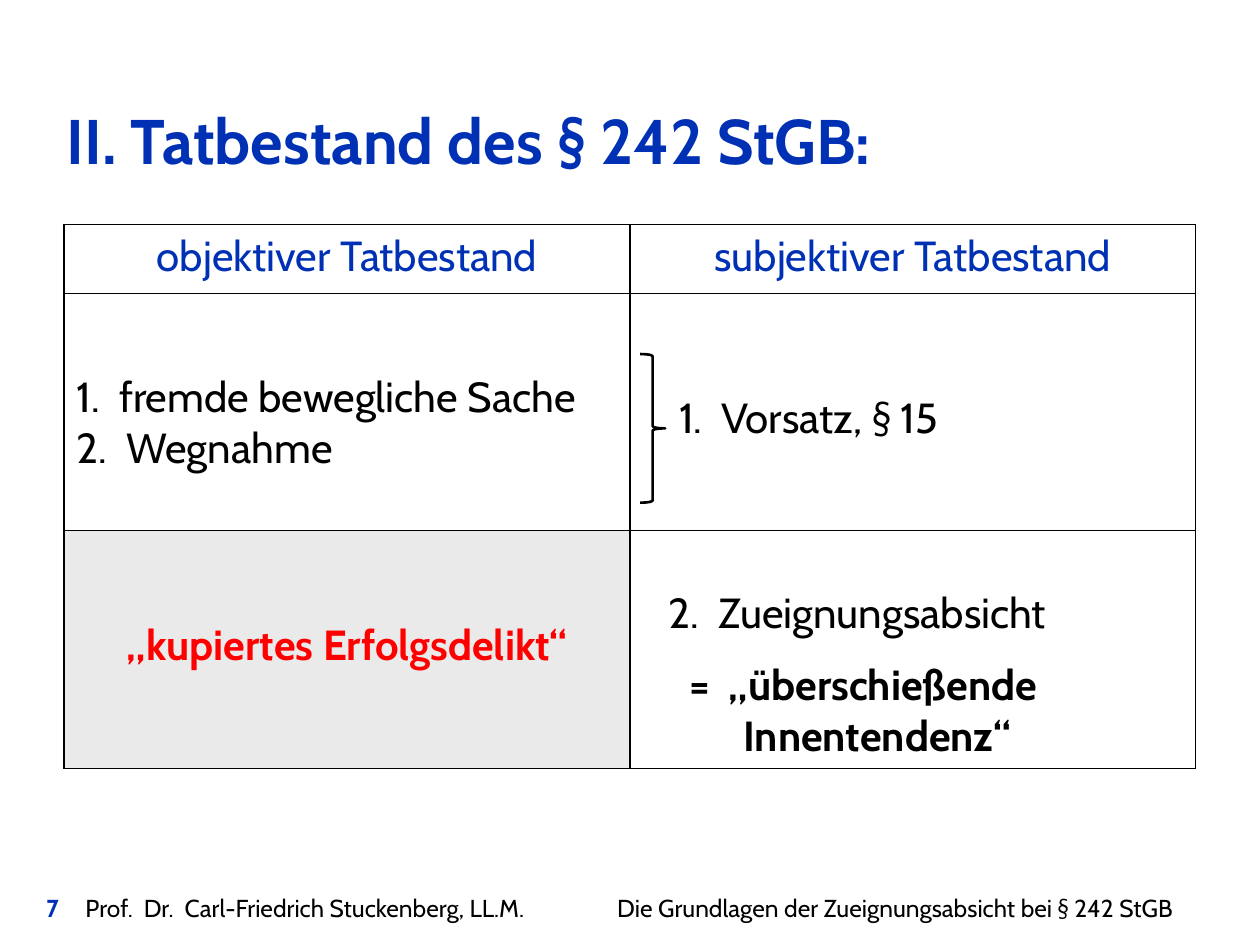
from pptx import Presentation
from pptx import util as u
from pptx.dml.color import RGBColor
from pptx.enum import shapes, text
from pptx.oxml.ns import qn
from lxml import etree

BLUE = RGBColor(0x00, 0x31, 0xB5)
BLACK = RGBColor(0, 0, 0)
RED = RGBColor(0xFF, 0, 0)
GREY = RGBColor(0xEA, 0xEA, 0xEA)
FONT = "Cabin"
LEFT, CENTER = text.PP_ALIGN.LEFT, text.PP_ALIGN.CENTER

TITLE = "II. Tatbestand des § 242 StGB:"
FOOTER = [
    ("7", BLUE, True),
    ("\tProf.  Dr.  Carl-Friedrich Stuckenberg, LL.M.", BLACK, False),
    ("\tDie Grundlagen der Zueignungsabsicht bei § 242 StGB", BLACK, False),
]
FOOTER_TABS = [0.31, 4.53]

ROW_HEIGHTS = [0.55, 1.88, 1.89]
COL_WIDTH = 4.49
# Each cell: left margin, top margin, alignment, colour, bold, lines
CELLS = [
    [
        (0.1, 0.05, CENTER, BLUE, False, ["objektiver Tatbestand"]),
        (0.1, 0.05, CENTER, BLUE, False, ["subjektiver Tatbestand"]),
    ],
    [
        (0.1, 0.62, LEFT, BLACK, False, ["1.  fremde bewegliche Sache", "2.  Wegnahme"]),
        (0.39, 0.79, LEFT, BLACK, False, ["1.  Vorsatz, § 15"]),
    ],
    [
        (0.1, 0.71, CENTER, RED, True, ["„kupiertes Erfolgsdelikt“"]),
        (0.31, 0.46, LEFT, BLACK, False, ["2.  Zueignungsabsicht"]),
    ],
]
TENDENCY = ["=  „überschießende", "Innentendenz“"]


def add_run(p, words, size, color, bold=False):
    r = p.add_run()
    r.text = words
    r.font.name = FONT
    r.font.size = u.Pt(size)
    r.font.bold = bold
    r.font.color.rgb = color


def add_textbox(s, x, y, w, h):
    tf = s.shapes.add_textbox(*map(u.Inches, (x, y, w, h))).text_frame
    tf.word_wrap = True
    return tf.paragraphs[0]


def add_borders(cell):
    tc_pr = cell._tc.get_or_add_tcPr()
    for i, side in enumerate(("lnL", "lnR", "lnT", "lnB")):
        ln = etree.Element(qn(f"a:{side}"), w=str(u.Pt(1)))
        fill = etree.SubElement(ln, qn("a:solidFill"))
        etree.SubElement(fill, qn("a:srgbClr"), val=str(BLACK))
        tc_pr.insert(i, ln)


def fill_cell(cell, left, top, align, color, bold, lines):
    cell.margin_left, cell.margin_top = u.Inches(left), u.Inches(top)
    cell.margin_bottom = u.Inches(0.03)
    tf = cell.text_frame
    for i, line in enumerate(lines):
        p = tf.add_paragraph() if i else tf.paragraphs[0]
        p.alignment = align
        add_run(p, line, 24, color, bold)
    cell.fill.background()
    add_borders(cell)


def add_tendency(cell):
    p = cell.text_frame.add_paragraph()
    p.space_before = u.Pt(12)
    p_pr = p._p.get_or_add_pPr()
    p_pr.set("marL", str(u.Inches(0.59)))
    p_pr.set("indent", str(u.Inches(-0.43)))
    add_run(p, TENDENCY[0], 24, BLACK, True)
    p.add_line_break()
    add_run(p, TENDENCY[1], 24, BLACK, True)


def add_footer(s):
    p = add_textbox(s, 0.27, 7.04, 9.61, 0.34)
    tabs = etree.SubElement(p._p.get_or_add_pPr(), qn("a:tabLst"))
    for pos in FOOTER_TABS:
        etree.SubElement(tabs, qn("a:tab"), pos=str(u.Inches(pos)), algn="l")
    for words, color, bold in FOOTER:
        add_run(p, words, 14, color, bold)


def add_facts_table(s):
    frame = s.shapes.add_table(
        len(ROW_HEIGHTS), 2, u.Inches(0.51), u.Inches(1.78),
        u.Inches(2 * COL_WIDTH), u.Inches(sum(ROW_HEIGHTS)))
    table = frame.table
    table.first_row = table.horz_banding = False
    for col in table.columns:
        col.width = u.Inches(COL_WIDTH)
    for i, (height, row) in enumerate(zip(ROW_HEIGHTS, CELLS)):
        table.rows[i].height = u.Inches(height)
        for j, content in enumerate(row):
            fill_cell(table.cell(i, j), *content)
    add_tendency(table.cell(2, 1))
    shaded = table.cell(2, 0).fill
    shaded.solid()
    shaded.fore_color.rgb = GREY


def add_brace(s):
    brace = s.shapes.add_shape(
        shapes.MSO_SHAPE.RIGHT_BRACE, *map(u.Inches, (5.08, 2.81, 0.2, 1.18)))
    brace.shadow.inherit = False
    brace.fill.background()
    brace.line.color.rgb = BLACK
    brace.line.width = u.Pt(1.5)


def main():
    prs = Presentation()
    prs.slide_width, prs.slide_height = u.Inches(10), u.Inches(7.5)
    s = prs.slides.add_slide(prs.slide_layouts[6])
    add_footer(s)
    add_run(add_textbox(s, 0.43, 0.76, 9.06, 0.79), TITLE, 36, BLUE, True)
    add_facts_table(s)
    add_brace(s)
    prs.save("out.pptx")


if __name__ == "__main__":
    main()
